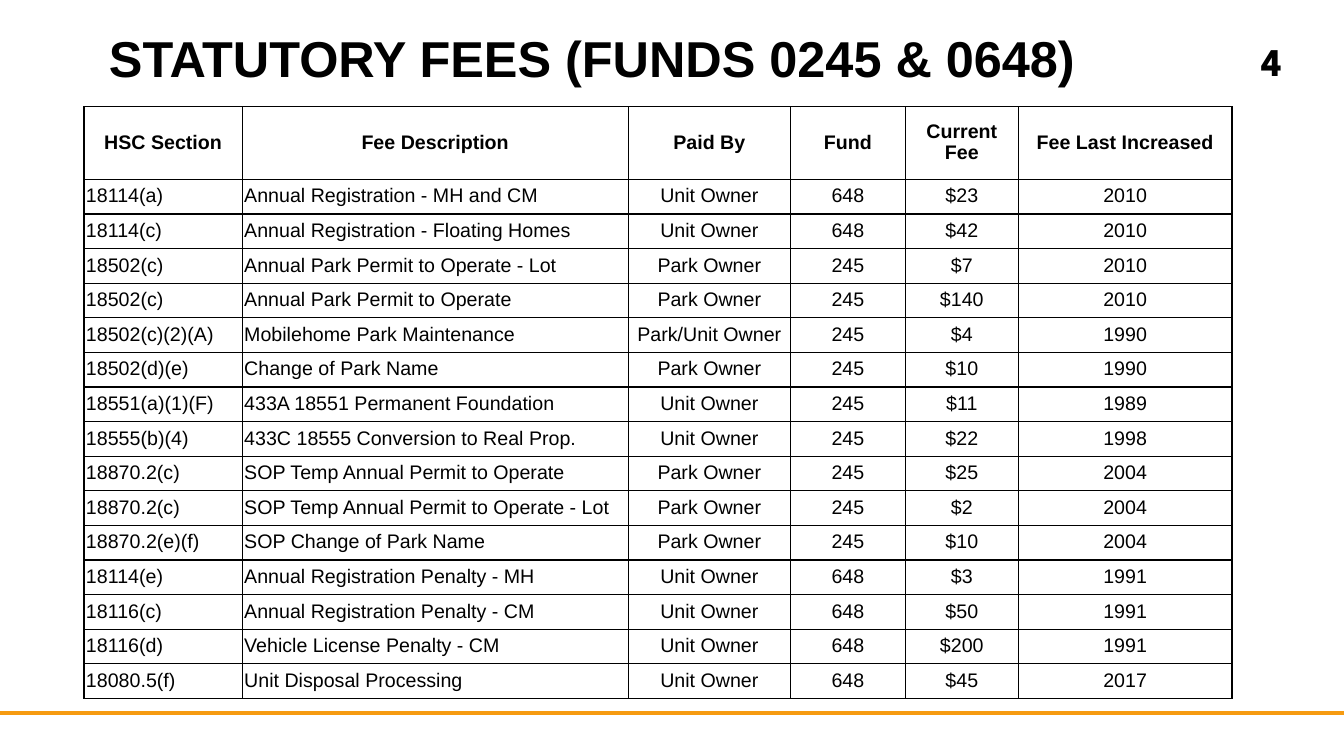
from dataclasses import dataclass

from lxml import etree
from pptx import Presentation, util as u
from pptx.dml.color import RGBColor
from pptx.enum import shapes, text
from pptx.oxml.ns import qn

COLUMNS, ROWS = 160, 90
SLIDE_WIDTH, SLIDE_HEIGHT = u.Inches(13.33), u.Inches(7.5)
LEFT, CENTER = text.PP_ALIGN.LEFT, text.PP_ALIGN.CENTER
MIDDLE, BOTTOM = text.MSO_ANCHOR.MIDDLE, text.MSO_ANCHOR.BOTTOM


@dataclass(frozen=True)
class Theme:
    ink: str = "000000"
    paper: str = "FFFFFF"
    accent: str = "F69B11"
    body_font: str = "Arial"
    number_font: str = "League Spartan"
    title_size: int = 36
    number_size: int = 28
    table_size: int = 14
    border_width: float = 1
    rule_width: float = 3


THEME = Theme()

# Heading, width in grid columns, alignment of the entries
FEE_COLUMNS = [
    ("HSC Section", 18.84, LEFT),
    ("Fee Description", 45.96, LEFT),
    ("Paid By", 19.32, CENTER),
    ("Fund", 13.68, CENTER),
    ("Current Fee", 13.44, CENTER),
    ("Fee Last Increased", 25.44, CENTER),
]
HEADING_HEIGHT, FEE_HEIGHT = 8.64, 4.12

FEES = [
    ("18114(a)", "Annual Registration - MH and CM", "Unit Owner", 648, 23, 2010),
    ("18114(c)", "Annual Registration - Floating Homes", "Unit Owner", 648, 42, 2010),
    ("18502(c)", "Annual Park Permit to Operate - Lot", "Park Owner", 245, 7, 2010),
    ("18502(c)", "Annual Park Permit to Operate", "Park Owner", 245, 140, 2010),
    ("18502(c)(2)(A)", "Mobilehome Park Maintenance", "Park/Unit Owner", 245, 4, 1990),
    ("18502(d)(e)", "Change of Park Name", "Park Owner", 245, 10, 1990),
    ("18551(a)(1)(F)", "433A 18551 Permanent Foundation", "Unit Owner", 245, 11, 1989),
    ("18555(b)(4)", "433C 18555 Conversion to Real Prop.", "Unit Owner", 245, 22, 1998),
    ("18870.2(c)", "SOP Temp Annual Permit to Operate", "Park Owner", 245, 25, 2004),
    ("18870.2(c)", "SOP Temp Annual Permit to Operate - Lot", "Park Owner", 245, 2, 2004),
    ("18870.2(e)(f)", "SOP Change of Park Name", "Park Owner", 245, 10, 2004),
    ("18114(e)", "Annual Registration Penalty - MH", "Unit Owner", 648, 3, 1991),
    ("18116(c)", "Annual Registration Penalty - CM", "Unit Owner", 648, 50, 1991),
    ("18116(d)", "Vehicle License Penalty - CM", "Unit Owner", 648, 200, 1991),
    ("18080.5(f)", "Unit Disposal Processing", "Unit Owner", 648, 45, 2017),
]


def across(columns):
    return round(SLIDE_WIDTH * columns / COLUMNS)


def down(rows):
    return round(SLIDE_HEIGHT * rows / ROWS)


def write(frame, wording, *, size, font=THEME.body_font, bold=False,
          align=LEFT, spacing=0.9, after=0):
    """Fill a text frame with one formatted paragraph."""
    paragraph = frame.paragraphs[0]
    paragraph.alignment = align
    paragraph.line_spacing = spacing
    paragraph.space_after = u.Pt(after)
    run = paragraph.add_run()
    run.text = wording
    run.font.name = font
    run.font.size = u.Pt(size)
    run.font.bold = bold
    run.font.color.rgb = RGBColor.from_string(THEME.ink)


def add_label(slide, wording, left, top, width, height, anchor, **style):
    box = slide.shapes.add_textbox(across(left), down(top), across(width), down(height))
    box.text_frame.word_wrap = True
    box.text_frame.vertical_anchor = anchor
    write(box.text_frame, wording, bold=True, **style)


def add_footer_rule(slide, row):
    rule = slide.shapes.add_connector(
        shapes.MSO_CONNECTOR.STRAIGHT, 0, down(row), SLIDE_WIDTH, down(row))
    rule.line.color.rgb = RGBColor.from_string(THEME.accent)
    rule.line.width = u.Pt(THEME.rule_width)
    etree.SubElement(rule._element.spPr, qn("a:effectLst"))


def add_borders(cell):
    properties = cell._tc.get_or_add_tcPr()
    for side in ("lnL", "lnR", "lnT", "lnB"):
        border = etree.SubElement(properties, qn(f"a:{side}"),
                                  w=str(u.Pt(THEME.border_width)))
        fill = etree.SubElement(border, qn("a:solidFill"))
        etree.SubElement(fill, qn("a:srgbClr"), val=THEME.ink)


def fill_cell(cell, wording, align, bold):
    add_borders(cell)
    cell.fill.solid()
    cell.fill.fore_color.rgb = RGBColor.from_string(THEME.paper)
    cell.vertical_anchor = MIDDLE
    cell.margin_left = cell.margin_right = u.Inches(0.02)
    cell.margin_top = cell.margin_bottom = u.Inches(0.01)
    write(cell.text_frame, wording, size=THEME.table_size, bold=bold,
          align=align, spacing=u.Pt(14.8), after=8)


def add_fee_table(slide, left, top):
    headings, widths, alignments = zip(*FEE_COLUMNS)
    heights = [HEADING_HEIGHT] + [FEE_HEIGHT] * len(FEES)
    table = slide.shapes.add_table(
        len(heights), len(widths), across(left), down(top),
        across(sum(widths)), down(sum(heights))).table
    table.first_row = table.horz_banding = False
    for column, width in zip(table.columns, widths):
        column.width = across(width)
    for row, height in zip(table.rows, heights):
        row.height = down(height)

    for index, heading in enumerate(headings):
        fill_cell(table.cell(0, index), heading, CENTER, True)
    for row, (section, description, payer, fund, fee, year) in enumerate(FEES, 1):
        entries = (section, description, payer, str(fund), f"${fee}", str(year))
        for index, entry in enumerate(entries):
            fill_cell(table.cell(row, index), entry, alignments[index], False)


def main():
    deck = Presentation()
    deck.slide_width, deck.slide_height = SLIDE_WIDTH, SLIDE_HEIGHT
    slide = deck.slides.add_slide(deck.slide_layouts[6])
    add_footer_rule(slide, 84.84)
    add_fee_table(slide, 10, 12.72)
    add_label(slide, "STATUTORY FEES (FUNDS 0245 & 0648)", 2.5, -0.84, 136, 16.2,
              MIDDLE, size=THEME.title_size, align=CENTER)
    add_label(slide, "4", 149, 3.72, 5, 7, BOTTOM,
              size=THEME.number_size, font=THEME.number_font)
    deck.save("out.pptx")


if __name__ == "__main__":
    main()
